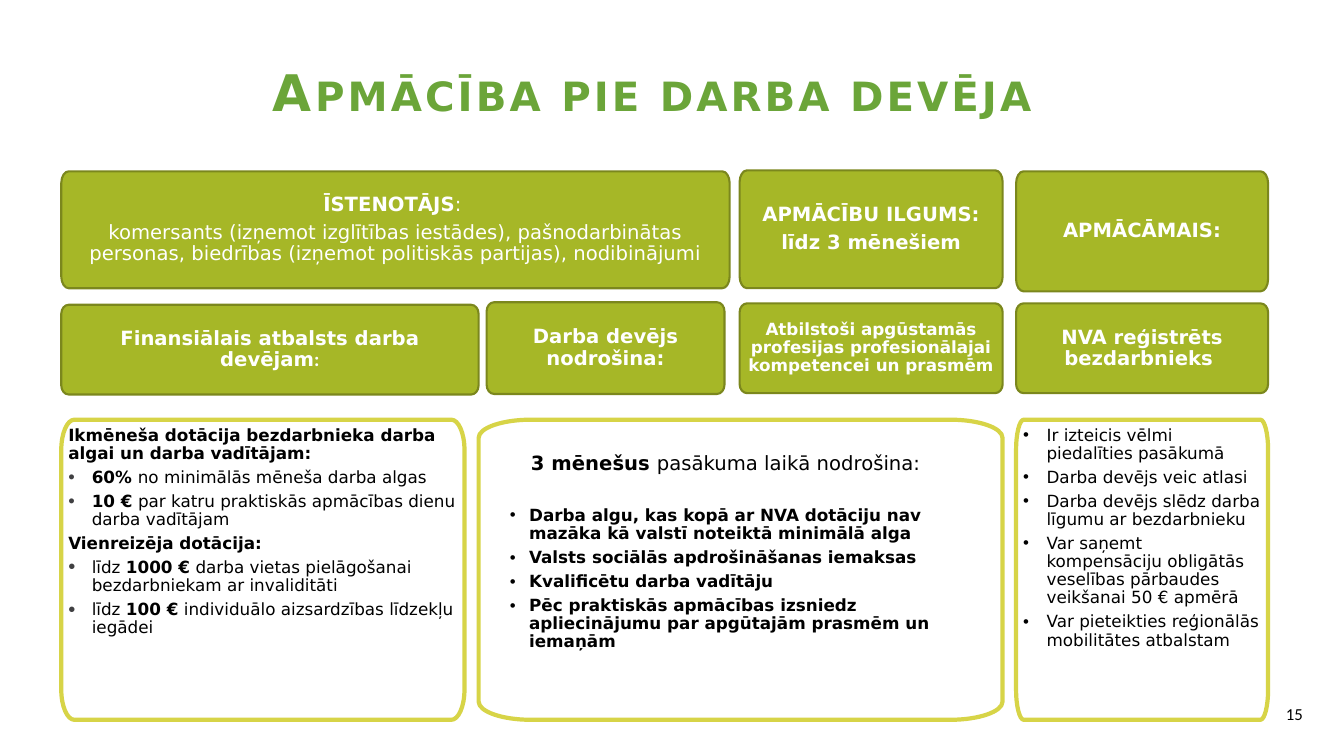
from lxml.etree import SubElement
from pptx import Presentation
from pptx.dml.color import RGBColor as Color
from pptx.enum.text import MSO_ANCHOR as Anchor, PP_ALIGN as Align
from pptx.oxml.ns import qn
from pptx.util import Pt

THEME = {
    "title_color": "6BA539", "header_fill": "A6B727", "header_line": "7B871D",
    "panel_fill": "FFFFFF", "panel_line": "D7D447", "light": "FFFFFF",
    "dark": "000000", "grey_bullet": "404042",
    "title_size": 36, "header_size": 14, "body_size": 12,
    "sans": "DejaVu Sans", "narrow": "Calibri",
}

BOLD = (True, THEME["sans"])
PLAIN = (False, THEME["sans"])
BOLD_NARROW = (True, THEME["narrow"])
NUMBER = (False, THEME["narrow"])

GREY_110 = {"indent": 16.8, "color": THEME["grey_bullet"], "percent": 110}
GREY_120 = {"indent": 16.8, "color": THEME["grey_bullet"], "percent": 120}
WIDE_BULLET = {"indent": 16.8}
TIGHT_BULLET = {"indent": 13.7}

TITLE = [(None, [("Apmācība pie darba devēja", BOLD)])]
SLIDE_NUMBER = [(None, [("15", NUMBER)])]

HEADERS = [
    ((725.8, 122.4, 180, 85.7), THEME["header_size"],
     [(None, [("APMĀCĀMAIS:", BOLD)])]),
    ((43.8, 122.4, 477.4, 83.5), THEME["header_size"], [
        (None, [("ĪSTENOTĀJS", BOLD), (": ", PLAIN)]),
        (None, [("komersants (izņemot izglītības iestādes), pašnodarbinātas personas, "
                 "biedrības (izņemot politiskās partijas), nodibinājumi", PLAIN)]),
    ]),
    ((43.8, 217.7, 298.1, 64.1), THEME["header_size"],
     [(None, [("Finansiālais atbalsts darba devējam", BOLD), (":", BOLD_NARROW)])]),
    ((347.6, 215.9, 169.9, 65.5), THEME["header_size"],
     [(None, [("Darba devējs nodrošina:", BOLD)])]),
    ((528.3, 121.7, 187.9, 84.2), THEME["header_size"], [
        (None, [("APMĀCĪBU ILGUMS:", BOLD)]),
        (None, [("līdz 3 mēnešiem", BOLD)]),
    ]),
    ((528.3, 216.7, 187.9, 64.1), THEME["body_size"],
     [(None, [("Atbilstoši apgūstamās profesijas profesionālajai kompetencei un prasmēm", BOLD)])]),
    ((725.8, 216.7, 180, 64.1), THEME["header_size"],
     [(None, [("NVA reģistrēts bezdarbnieks ", BOLD)])]),
]

GRANT_TEXT = [
    (None, [("Ikmēneša dotācija bezdarbnieka darba algai un darba vadītājam:", BOLD)]),
    (GREY_110, [("60% ", BOLD), ("no minimālās mēneša darba algas", PLAIN)]),
    (GREY_110, [("10 €", BOLD), (" par katru praktiskās apmācības dienu darba vadītājam", PLAIN)]),
    (None, [("Vienreizēja dotācija:", BOLD)]),
    (GREY_120, [("līdz ", PLAIN), ("1000 €", BOLD),
                (" darba vietas pielāgošanai bezdarbniekam ar invaliditāti", PLAIN)]),
    (GREY_120, [("līdz ", PLAIN), ("100 €", BOLD),
                (" individuālo aizsardzības līdzekļu iegādei", PLAIN)]),
]
TRAINEE_TEXT = [(WIDE_BULLET, [(line, PLAIN)]) for line in (
    "Ir izteicis vēlmi piedalīties pasākumā",
    "Darba devējs veic atlasi",
    "Darba devējs slēdz darba līgumu ar bezdarbnieku",
    "Var saņemt kompensāciju obligātās veselības pārbaudes veikšanai 50 € apmērā",
    "Var pieteikties reģionālās mobilitātes atbalstam",
)]
EMPLOYER_INTRO = [(None, [("3 mēnešus ", BOLD), ("pasākuma laikā nodrošina:", PLAIN)])]
EMPLOYER_TEXT = [(TIGHT_BULLET, [(line, BOLD)]) for line in (
    "Darba algu, kas kopā ar NVA dotāciju nav mazāka kā valstī noteiktā minimālā alga",
    "Valsts sociālās apdrošināšanas iemaksas",
    "Kvalificētu darba vadītāju",
    "Pēc praktiskās apmācības izsniedz apliecinājumu par apgūtajām prasmēm un iemaņām",
)]

PANEL_TOP, PANEL_HEIGHT = 299.8, 214.4
PANELS = [
    (43.8, 288, (9.4, 21.5), GRANT_TEXT),
    (341.9, 374.2, (37.4, 13), []),
    (725.8, 180, (5.5, 21.5), TRAINEE_TEXT),
]
CURVE = 0.55


def add_bullet(paragraph, bullet):
    properties = paragraph._p.get_or_add_pPr()
    properties.set("marL", str(Pt(bullet["indent"])))
    properties.set("indent", str(-Pt(bullet["indent"])))
    if "color" in bullet:
        color = SubElement(properties, qn("a:buClr"))
        SubElement(color, qn("a:srgbClr")).set("val", bullet["color"])
        SubElement(properties, qn("a:buSzPct")).set("val", str(bullet["percent"] * 1000))
    SubElement(properties, qn("a:buFont")).set("typeface", "Arial")
    SubElement(properties, qn("a:buChar")).set("char", "•")


def write(shape, content, size, color, align=Align.LEFT, anchor=Anchor.TOP, inset=None, gap=0.35):
    frame = shape.text_frame
    frame.word_wrap = True
    frame.vertical_anchor = anchor
    if inset is not None:
        frame.margin_left = frame.margin_right = Pt(inset)
        frame.margin_top = frame.margin_bottom = Pt(inset)
    for index, (bullet, runs) in enumerate(content):
        paragraph = frame.add_paragraph() if index else frame.paragraphs[0]
        paragraph.alignment = align
        paragraph.line_spacing = 0.9
        paragraph.space_before = Pt(0)
        paragraph.space_after = Pt(gap * size)
        if bullet:
            add_bullet(paragraph, bullet)
        for text, (bold, font) in runs:
            run = paragraph.add_run()
            run.text = text
            run.font.name = font
            run.font.size = Pt(size)
            run.font.bold = bold
            run.font.color.rgb = Color.from_string(color)


def round_corners(shape, points, corners):
    left, top = shape.left, shape.top
    segments = list(shape._element.iter(qn("a:lnTo")))
    for index, (corner_x, corner_y) in enumerate(corners):
        start, end = points[2 * index], points[2 * index + 1]
        segment = segments[2 * index]
        segment.tag = qn("a:cubicBezTo")
        for position, (x, y) in enumerate((start, end)):
            control = segment.makeelement(qn("a:pt"), {
                "x": str(round(x + CURVE * (corner_x - x)) - left),
                "y": str(round(y + CURVE * (corner_y - y)) - top),
            })
            segment.insert(position, control)


def add_rounded(slide, box, radii, fill, line, weight):
    left, top, width, height = map(Pt, box)
    radius_x, radius_y = map(Pt, radii)
    right, bottom = left + width, top + height
    points = [
        (left, top + radius_y), (left + radius_x, top),
        (right - radius_x, top), (right, top + radius_y),
        (right, bottom - radius_y), (right - radius_x, bottom),
        (left + radius_x, bottom), (left, bottom - radius_y),
    ]
    builder = slide.shapes.build_freeform(*points[0])
    builder.add_line_segments(points[1:], close=True)
    shape = builder.convert_to_shape()
    round_corners(shape, points, [(left, top), (right, top), (right, bottom), (left, bottom)])
    shape.shadow.inherit = False
    shape.fill.solid()
    shape.fill.fore_color.rgb = Color.from_string(fill)
    shape.line.color.rgb = Color.from_string(line)
    shape.line.width = Pt(weight)
    return shape


def add_text(slide, box, *args, **options):
    shape = slide.shapes.add_textbox(*map(Pt, box))
    write(shape, *args, **options)
    return shape


def main():
    presentation = Presentation()
    presentation.slide_width, presentation.slide_height = Pt(960), Pt(540)
    slide = presentation.slides.add_slide(presentation.slide_layouts[6])

    add_text(slide, (803.2, 496.1, 134.6, 28.8), SLIDE_NUMBER, THEME["body_size"],
             THEME["dark"], align=Align.RIGHT, anchor=Anchor.MIDDLE, gap=0)
    for box, size, content in HEADERS:
        header = add_rounded(slide, box, (5.3, box[3] / 10),
                             THEME["header_fill"], THEME["header_line"], 1.5)
        write(header, content, size, THEME["light"], Align.CENTER, Anchor.MIDDLE, inset=5)
    for left, width, radii, content in PANELS:
        panel = add_rounded(slide, (left, PANEL_TOP, width, PANEL_HEIGHT), radii,
                            THEME["panel_fill"], THEME["panel_line"], 3)
        if content:
            write(panel, content, THEME["body_size"], THEME["dark"], inset=5)
    add_text(slide, (372.2, 320.4, 301, 50.4), EMPLOYER_INTRO,
             THEME["header_size"], THEME["dark"])
    add_text(slide, (357.2, 358.6, 328.3, 114.5), EMPLOYER_TEXT,
             THEME["body_size"], THEME["dark"])

    title = add_text(slide, (187.9, 36, 584.6, 63.4), TITLE, THEME["title_size"],
                     THEME["title_color"], align=Align.CENTER, anchor=Anchor.MIDDLE, gap=0)
    title_properties = title.text_frame.paragraphs[0].runs[0].font._element
    title_properties.set("cap", "small")
    title_properties.set("spc", "220")

    presentation.save("out.pptx")


if __name__ == "__main__":
    main()
